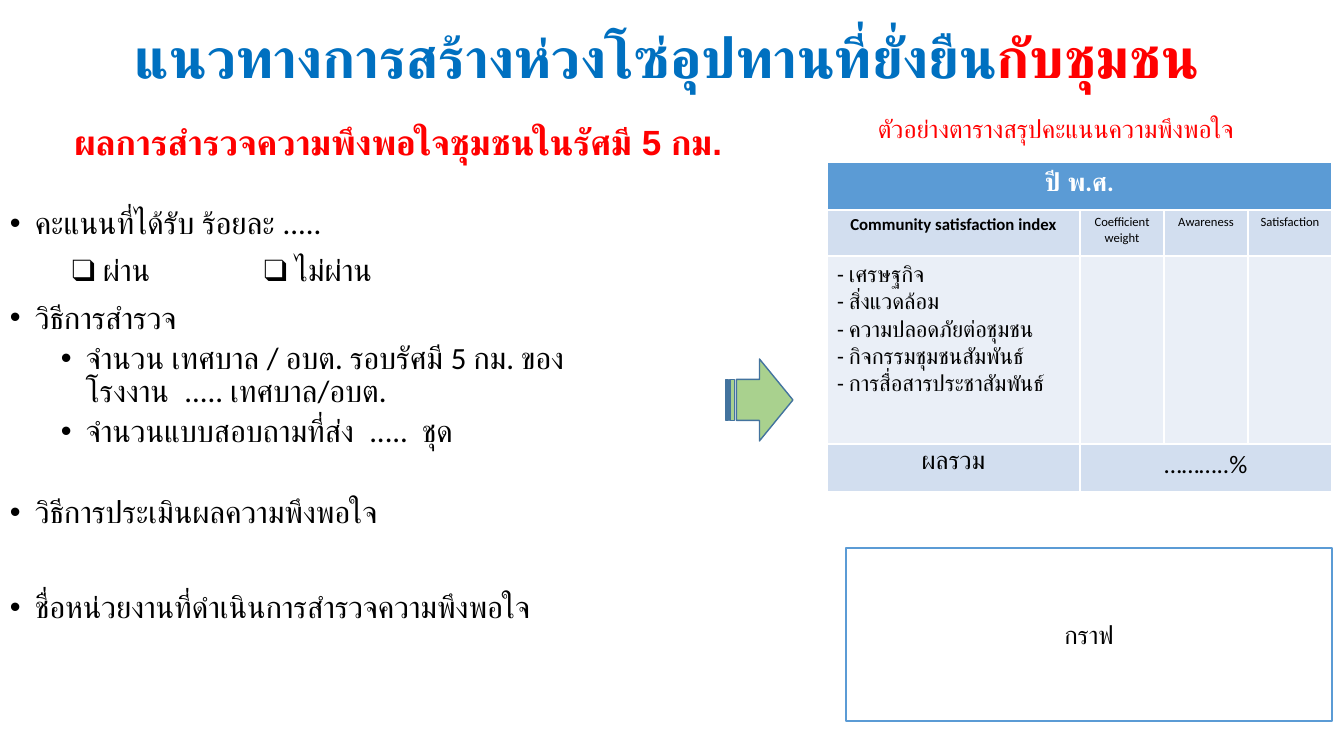
from lxml import etree
from pptx import Presentation, util as u
from pptx.dml.color import RGBColor
from pptx.enum import shapes, text
from pptx.oxml import ns

PX = 914400 / 100.8

RED = RGBColor(0xFF, 0x00, 0x00)
TITLE_BLUE = RGBColor(0x00, 0x70, 0xC0)
BLACK = RGBColor(0x00, 0x00, 0x00)
WHITE = RGBColor(0xFF, 0xFF, 0xFF)
HEADER_BLUE = RGBColor(0x5B, 0x9B, 0xD5)
BAND_DARK = RGBColor(0xD2, 0xDE, 0xEF)
BAND_LIGHT = RGBColor(0xEA, 0xEF, 0xF7)
ARROW_GREEN = RGBColor(0xA9, 0xD1, 0x8E)
ARROW_EDGE = RGBColor(0x43, 0x73, 0x9E)
CENTER = text.PP_ALIGN.CENTER


def px(*lengths):
    """Turn pixel lengths into EMU."""
    return [round(length * PX) for length in lengths]


def style(paragraph, size, color, bold=False, align=None, name="Calibri"):
    paragraph.alignment = align
    font = paragraph.font
    font.name, font.size, font.bold = name, u.Pt(size), bold
    font.color.rgb = color


prs = Presentation()
prs.slide_width, prs.slide_height = px(1344, 756)
slide = prs.slides.add_slide(prs.slide_layouts[5])

# Title
title = slide.shapes.title
title.left, title.top, title.width, title.height = px(17, 16, 1300, 89)
title.text_frame.auto_size = text.MSO_AUTO_SIZE.NONE
title.text_frame.vertical_anchor = text.MSO_ANCHOR.MIDDLE
heading = title.text_frame.paragraphs[0]
heading.line_spacing = 0.9
style(heading, 40, TITLE_BLUE, True, CENTER, "Arial")
for words, color in (("แนวทางการสร้างห่วงโซ่อุปทานที่ยั่งยืน", TITLE_BLUE), ("กับชุมชน", RED)):
    run = heading.add_run()
    run.text = words
    run.font.color.rgb = color

# Survey heading
survey = slide.shapes.add_textbox(*px(17, 105, 762, 78)).text_frame
survey.word_wrap = True
survey.vertical_anchor = text.MSO_ANCHOR.MIDDLE
survey.text = "ผลการสำรวจความพึงพอใจชุมชนในรัศมี 5 กม."
survey.paragraphs[0].line_spacing = 0.9
style(survey.paragraphs[0], 25, RED, True, CENTER, "Arial")

# Survey points: words, left margin in px (None for the tick line), space before in pt
points = [
    ("คะแนนที่ได้รับ ร้อยละ .....", 25, 10),
    ("\t❑ ผ่าน\t❑ ไม่ผ่าน", None, 10),
    ("วิธีการสำรวจ", 25, 10),
    ("จำนวน เทศบาล / อบต. รอบรัศมี 5 กม. ของโรงงาน  ..... เทศบาล/อบต.", 76, 5),
    ("จำนวนแบบสอบถามที่ส่ง  .....  ชุด", 76, 5),
    ("วิธีการประเมินผลความพึงพอใจ", 25, 34),
    ("ชื่อหน่วยงานที่ดำเนินการสำรวจความพึงพอใจ", 25, 44),
]
body = slide.shapes.add_textbox(*px(0, 203, 640, 475)).text_frame
body.word_wrap = True
for i, (words, margin, before) in enumerate(points):
    point = body.paragraphs[0] if i == 0 else body.add_paragraph()
    point.text = words
    point.line_spacing = 0.9
    point.space_before = u.Pt(before)
    props = point._p.get_or_add_pPr()
    if margin is None:
        stops = etree.SubElement(props, ns.qn("a:tabLst"))
        for stop in px(62, 254):
            etree.SubElement(stops, ns.qn("a:tab"), pos=str(stop), algn="l")
    else:
        left, hanging = px(margin, -25)
        props.set("marL", str(left))
        props.set("indent", str(hanging))
        etree.SubElement(props, ns.qn("a:buFont"), typeface="Arial")
        etree.SubElement(props, ns.qn("a:buChar"), char="•")
    style(point, 22, BLACK)

# Score table
table = slide.shapes.add_table(4, 4, *px(827, 162, 505, 330)).table
for column, width in zip(table.columns, px(253, 84, 84, 84)):
    column.width = width
for row, height in zip(table.rows, px(48, 46, 188, 48)):
    row.height = height
for r, fill in enumerate((HEADER_BLUE, BAND_DARK, BAND_LIGHT, BAND_DARK)):
    for c in range(4):
        cell = table.cell(r, c)
        cell.fill.solid()
        cell.fill.fore_color.rgb = fill
table.cell(0, 0).merge(table.cell(0, 3))
table.cell(3, 1).merge(table.cell(3, 3))

topics = ("เศรษฐกิจ", "สิ่งแวดล้อม", "ความปลอดภัยต่อชุมชน",
          "กิจกรรมชุมชนสัมพันธ์", "การสื่อสารประชาสัมพันธ์")
entries = [
    (0, 0, "ปี พ.ศ.", 18, WHITE, True, CENTER),
    (1, 0, "Community satisfaction index", 12, BLACK, True, CENTER),
    (1, 1, "Coefficient weight", 9, BLACK, False, CENTER),
    (1, 2, "Awareness", 9, BLACK, False, CENTER),
    (1, 3, "Satisfaction", 9, BLACK, False, CENTER),
    (2, 0, "\n".join(f"- {topic}" for topic in topics), 16, BLACK, False, None),
    (3, 0, "ผลรวม", 18, BLACK, False, CENTER),
    (3, 1, "………..%", 18, BLACK, False, CENTER),
]
for r, c, words, size, color, bold, align in entries:
    frame = table.cell(r, c).text_frame
    frame.text = words
    for paragraph in frame.paragraphs:
        style(paragraph, size, color, bold, align)

# Graph area
graph = slide.shapes.add_shape(shapes.MSO_SHAPE.RECTANGLE, *px(846, 548, 486, 173))
graph.text_frame.text = "กราฟ"
graph.text_frame.vertical_anchor = text.MSO_ANCHOR.MIDDLE
style(graph.text_frame.paragraphs[0], 18, BLACK, align=CENTER)

# Table caption
caption = slide.shapes.add_textbox(*px(868, 108, 440, 40)).text_frame
caption.word_wrap = True
caption.text = "ตัวอย่างตารางสรุปคะแนนความพึงพอใจ"
style(caption.paragraphs[0], 18, RED)

# Arrow from the survey to the table
arrow = slide.shapes.add_shape(shapes.MSO_SHAPE.STRIPED_RIGHT_ARROW, *px(726, 359, 67, 82))

for shape, fill, edge in ((graph, WHITE, HEADER_BLUE), (arrow, ARROW_GREEN, ARROW_EDGE)):
    shape.shadow.inherit = False
    shape.fill.solid()
    shape.fill.fore_color.rgb = fill
    shape.line.color.rgb = edge
    shape.line.width = u.Pt(1)

prs.save("out.pptx")
